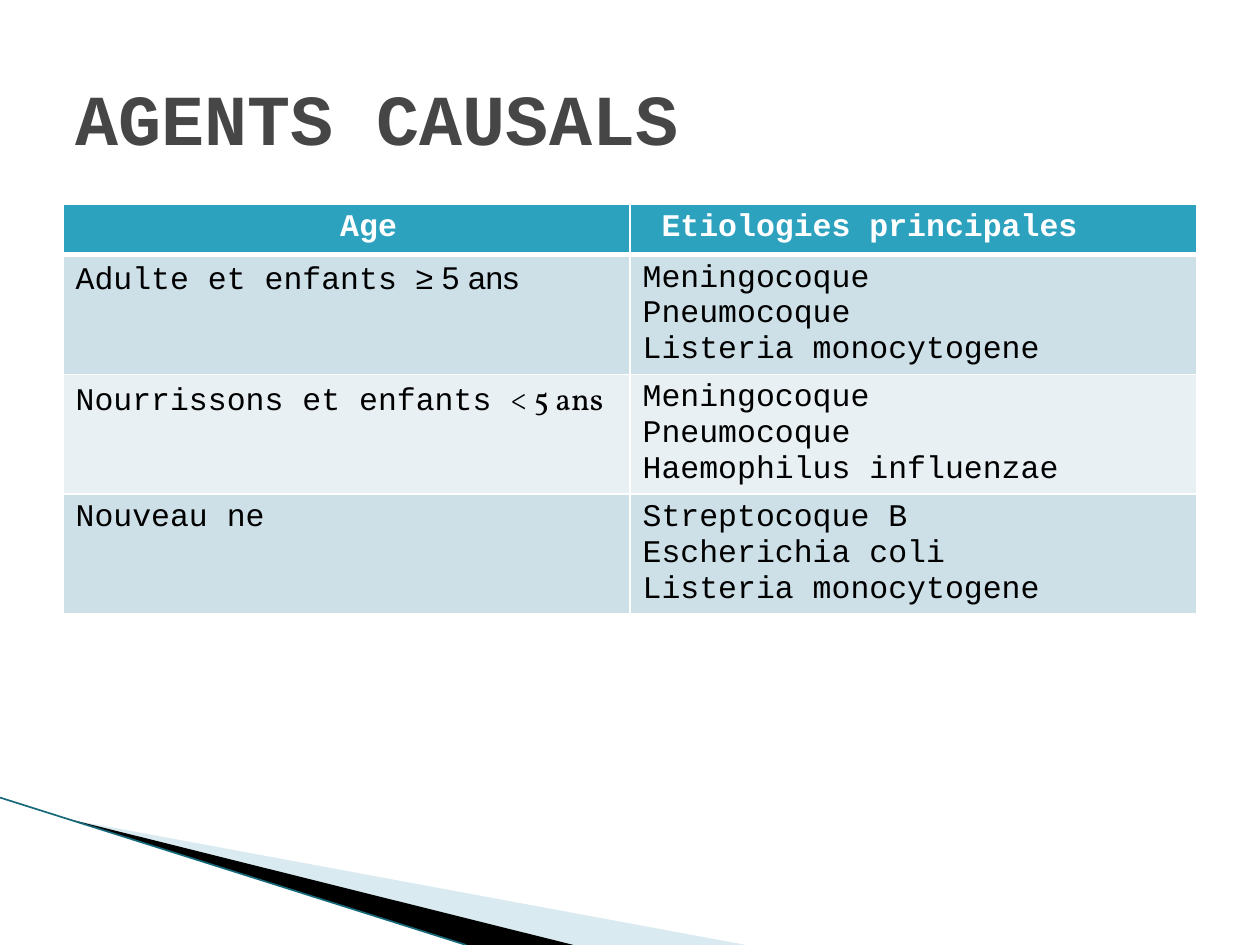
from lxml.etree import SubElement
from pptx import Presentation
from pptx.dml.color import RGBColor
from pptx.enum.text import MSO_ANCHOR, PP_ALIGN
from pptx.oxml.ns import qn
from pptx.util import Inches, Pt

WIDE, HIGH = 10, 7.5
MONO = "Courier New"
HEAD = [("Age", 14), ("Etiologies principales", 1)]
ROWS = [
    ([("Adulte et enfants ", MONO), ("≥ 5 ans", "Arial")],
     ["Meningocoque", "Pneumocoque", "Listeria monocytogene"]),
    ([("Nourrissons et enfants ", MONO), ("< 5 ans", "Vollkorn")],
     ["Meningocoque", "Pneumocoque", "Haemophilus influenzae"]),
    ([("Nouveau ne", MONO)],
     ["Streptocoque B", "Escherichia coli", "Listeria monocytogene"]),
]
BANDS = ["CDE0E8", "E8F0F4"]
WEDGES = [
    ("A0CBDC", 40, [(0.15, 0.15), (1.6, 1), (1.22, 1)]),
    ("000000", 100, [(0.14, 0.14), (1.23, 1), (1, 1)]),
]


def tint(code):
    """Turn a hex string into a colour."""
    return RGBColor.from_string(code)


def style(item, form):
    """Set each attribute named in a dict of format values."""
    for name, value in form.items():
        setattr(item, name, value)


def write(para, text, face, size, code, bold=False):
    """Add one formatted run to a paragraph."""
    run = para.add_run()
    run.text = text
    style(run.font, {"name": face, "size": Pt(size), "bold": bold})
    run.font.color.rgb = tint(code)


def edge(cell, base):
    """Draw white borders round a cell, the bottom one base points wide."""
    props = cell._tc.get_or_add_tcPr()
    for side, width in zip("LRTB", (1, 1, 1, base)):
        line = SubElement(props, qn(f"a:ln{side}"), w=str(Pt(width)))
        fill = SubElement(line, qn("a:solidFill"))
        SubElement(fill, qn("a:srgbClr"), val="FFFFFF")


def paint(cell, code, base=1):
    """Give a cell its borders and fill."""
    edge(cell, base)
    cell.fill.solid()
    cell.fill.fore_color.rgb = tint(code)


def add_wedges(slide, box):
    """Place the corner wedges and their edge line in a box."""
    left, top, width, height = box

    def spot(x, y):
        """Turn shares of the box into lengths."""
        return Inches(left + x * width), Inches(top + y * height)

    for code, alpha, points in WEDGES:
        first, *rest = [spot(*point) for point in points]
        path = slide.shapes.build_freeform(*first)
        path.add_line_segments(rest)
        shape = path.convert_to_shape()
        shape.shadow.inherit = False
        shape.line.fill.background()
        shape.fill.solid()
        shape.fill.fore_color.rgb = tint(code)
        mark = shape._element.spPr.find(".//" + qn("a:srgbClr"))
        SubElement(mark, qn("a:alpha"), val=str(alpha * 1000))
    line = slide.shapes.add_connector(1, *spot(0, 0), *spot(1, 1))
    line.line.color.rgb = tint("16697A")
    line.line.width = Pt(0.95)
    SubElement(line._element.spPr, qn("a:effectLst"))


def add_title(slide, box):
    """Place and format the title."""
    title = slide.shapes.title
    style(title, dict(zip(("left", "top", "width", "height"), map(Inches, box))))
    frame = title.text_frame
    style(frame, {"vertical_anchor": MSO_ANCHOR.MIDDLE, "word_wrap": True})
    para = frame.paragraphs[0]
    para.alignment = PP_ALIGN.LEFT
    write(para, "AGENTS CAUSALS", MONO, 41, "464646", True)


def add_grid(slide, box):
    """Place the table of ages and causes."""
    frame = slide.shapes.add_table(len(ROWS) + 1, 2, *map(Inches, box))
    grid = frame.table
    tall = (box[3] - 0.4) / len(ROWS)
    for index, row in enumerate(grid.rows):
        row.height = Inches(tall if index else 0.4)
    for cell, (text, shift) in zip(grid.rows[0].cells, HEAD):
        paint(cell, "2DA2BF", 3)
        cell.margin_left = Inches(0.1 + shift * 0.15)
        write(cell.text_frame.paragraphs[0], text, MONO, 18, "FFFFFF", True)
    for index, (age, germs) in enumerate(ROWS):
        pair = grid.rows[index + 1].cells
        lines = [[age], [[(germ, MONO)] for germ in germs]]
        for cell, paras in zip(pair, lines):
            paint(cell, BANDS[index % 2])
            body = cell.text_frame
            for count, runs in enumerate(paras):
                para = body.add_paragraph() if count else body.paragraphs[0]
                for text, face in runs:
                    write(para, text, face, 18, "000000")


def main():
    """Build the slide and save it."""
    deck = Presentation()
    style(deck, {"slide_width": Inches(WIDE), "slide_height": Inches(HIGH)})
    slide = deck.slides.add_slide(deck.slide_layouts[5])
    side = WIDE * 0.05
    span = WIDE - 2 * side
    add_wedges(slide, (0, 6.33, WIDE * 0.37, HIGH - 6.33))
    add_grid(slide, (side, 1.62, span, 3.25))
    add_title(slide, (side, HIGH * 0.04, span, HIGH / 6))
    deck.save("out.pptx")


if __name__ == "__main__":
    main()
